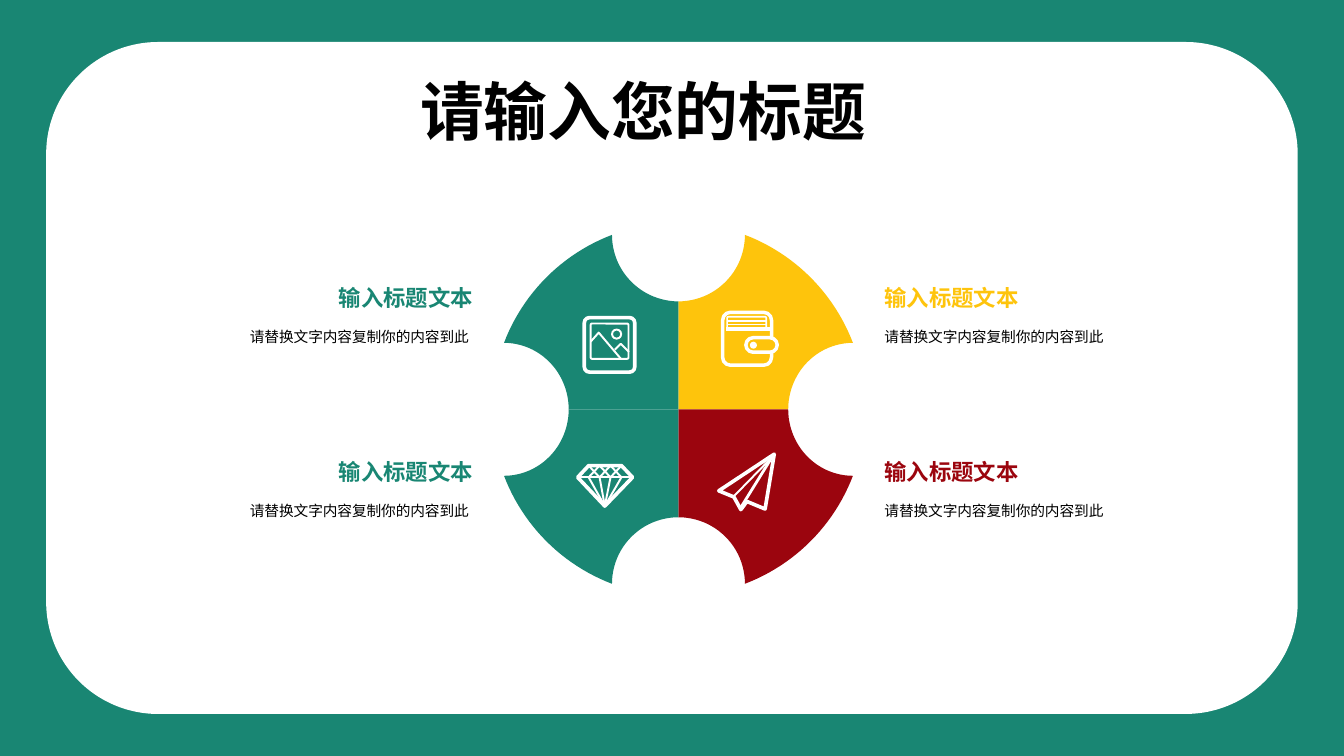
import math
from lxml import etree
from pptx import Presentation
from pptx import util as u
from pptx.dml.color import RGBColor
from pptx.enum import shapes, text
from pptx.oxml import ns

COLORS = {
    "green": "198673",
    "yellow": "FEC40C",
    "red": "9B050E",
    "white": "FFFFFF",
    "black": "000000",
}
CENTER_X, CENTER_Y = 484.65, 292.4
BITE_CENTER, BITE_RADIUS, SIDE_BITE_DEPTH = 124.6, 47.5, 46.2


def arc(x, y, radius_x, radius_y, start, end, steps=24):
    angles = [math.radians(start + (end - start) * i / steps) for i in range(steps + 1)]
    return [(x + radius_x * math.cos(a), y + radius_y * math.sin(a)) for a in angles]


def quadrant_points(side_x, side_y):
    rim = math.hypot(BITE_CENTER, BITE_RADIUS)
    rim_angle = math.degrees(math.atan2(BITE_RADIUS, BITE_CENTER))
    points = [(0, 0)]
    points += arc(0, BITE_CENTER, BITE_RADIUS, BITE_RADIUS, -90, 0)
    points += arc(0, 0, rim, rim, 90 - rim_angle, rim_angle)
    points += arc(BITE_CENTER, 0, SIDE_BITE_DEPTH, BITE_RADIUS, 90, 180)
    return [(CENTER_X + side_x * x, CENTER_Y + side_y * y) for x, y in points]


class Painter:
    font = "Arial"

    def __init__(self, slide):
        self.slide = slide

    def color(self, name):
        return RGBColor.from_string(COLORS[name])

    def stroke(self, shape, width):
        shape.line.color.rgb = self.color("white")
        shape.line.width = u.Pt(width)
        line = shape._element.spPr.find(ns.qn("a:ln"))
        etree.SubElement(line, ns.qn("a:round"))

    def finish(self, shape, fill, width):
        shape.shadow.inherit = False
        if fill:
            shape.fill.solid()
            shape.fill.fore_color.rgb = self.color(fill)
        else:
            shape.fill.background()
        if width:
            self.stroke(shape, width)
        else:
            shape.line.fill.background()

    def preset(self, kind, box, fill=None, width=0, corner=None):
        shape = self.slide.shapes.add_shape(kind, *map(u.Pt, box))
        if corner is not None:
            shape.adjustments[0] = corner
        self.finish(shape, fill, width)

    def rounded(self, box, corner=None, fill=None, width=0):
        self.preset(shapes.MSO_SHAPE.ROUNDED_RECTANGLE, box, fill, width, corner)

    def oval(self, box, fill=None, width=0):
        self.preset(shapes.MSO_SHAPE.OVAL, box, fill, width)

    def outline(self, points, fill=None, width=0, close=True):
        points = [(u.Pt(x), u.Pt(y)) for x, y in points]
        builder = self.slide.shapes.build_freeform(*points[0])
        builder.add_line_segments(points[1:], close=close)
        self.finish(builder.convert_to_shape(), fill, width)

    def line(self, start, end, width):
        connector = self.slide.shapes.add_connector(
            shapes.MSO_CONNECTOR.STRAIGHT, *map(u.Pt, (*start, *end)))
        self.stroke(connector, width)
        etree.SubElement(connector._element.spPr, ns.qn("a:effectLst"))

    def label(self, box, words, size, color="black", bold=False, font=None,
              align=text.PP_ALIGN.LEFT, anchor=text.MSO_ANCHOR.TOP,
              insets=(0, 0, 0, 0), spacing=None):
        frame = self.slide.shapes.add_textbox(*map(u.Pt, box)).text_frame
        frame.word_wrap = True
        frame.vertical_anchor = anchor
        (frame.margin_left, frame.margin_top,
         frame.margin_right, frame.margin_bottom) = map(u.Pt, insets)
        paragraph = frame.paragraphs[0]
        paragraph.alignment = align
        if spacing:
            paragraph.line_spacing = spacing
        run = paragraph.add_run()
        run.text = words
        run.font.name = font or self.font
        run.font.size = u.Pt(size)
        run.font.bold = bold
        run.font.color.rgb = self.color(color)
        east_asian = etree.SubElement(run.font._element, ns.qn("a:ea"))
        east_asian.set("typeface", font or self.font)


def draw_plane(painter):
    painter.outline([(513.4, 350.6), (553, 324.4), (546.5, 363.6), (533.5, 358.2),
                     (529.2, 364), (524.2, 355)], width=2.6)
    nose = (551.5, 326.5)
    painter.line((524.2, 354.5), nose, 1.4)
    painter.line((529.5, 362), nose, 2)


def draw_photo(painter):
    painter.rounded((417.4, 226.9, 36, 38.9), 0.1, width=2.6)
    painter.rounded((421.9, 231.1, 27, 25.2), 0.04, width=1.4)
    painter.oval((437.2, 235.4, 6.5, 6.5), width=1.4)
    painter.outline([(421.9, 244.1), (427.7, 237.6), (443.5, 256.3)], width=1.4, close=False)
    painter.outline([(439.2, 249.8), (443.5, 245.5), (449.3, 251.3)], width=1.4, close=False)


def draw_wallet(painter):
    painter.rounded((516.2, 223.1, 34.9, 37.8), 0.16, width=2.5)
    painter.rounded((519.4, 226.3, 28, 8), 0.1, width=1.2)
    for y in (229.1, 231.8):
        painter.line((519.4, y), (547.4, y), 1.2)
    painter.line((518.4, 235.1), (550.8, 235.1), 2.5)
    painter.rounded((532.8, 241.2, 22.4, 10.4), 0.5, "yellow", 2.5)
    painter.oval((535.7, 244.1, 5, 5), "white")


def draw_diamond(painter):
    top, girdle, tip = 332.6, 341, (432, 361.5)
    left, right = 412.6, 451.8
    facets = [420.5 + 7.8 * i for i in range(4)]
    painter.outline([(left, girdle), (facets[0], top), (facets[-1], top),
                     (right, girdle), tip], width=2.6)
    painter.line((left, girdle), (right, girdle), 1.4)
    for x in facets:
        painter.line((x, girdle), tip, 1.4)
    for levels in ((top, girdle), (girdle, top)):
        painter.outline(list(zip(facets, levels * 2)), width=1.4, close=False)


def main():
    presentation = Presentation()
    presentation.slide_width, presentation.slide_height = u.Pt(960), u.Pt(540)
    slide = presentation.slides.add_slide(presentation.slide_layouts[6])
    painter = Painter(slide)
    slide.background.fill.solid()
    slide.background.fill.fore_color.rgb = painter.color("green")
    painter.rounded((33, 30, 894, 480), fill="white")

    quadrants = [(1, -1, "yellow"), (-1, -1, "green"), (1, 1, "red"), (-1, 1, "green")]
    for side_x, side_y, color in quadrants:
        painter.outline(quadrant_points(side_x, side_y), color)

    for draw in (draw_plane, draw_photo, draw_wallet, draw_diamond):
        draw(painter)

    for side_x, side_y, color in quadrants:
        top = 191.6 if side_y < 0 else 315.6
        if side_x > 0:
            left, width, align = 609.4, 276.5, text.PP_ALIGN.LEFT
            heading_insets, body_insets = (22.4, 0, 0, 0), (22.4, 0, 0, 15.8)
        else:
            left, width, align = 74.6, 285.5, text.PP_ALIGN.RIGHT
            heading_insets, body_insets = (0, 0, 22.4, 0), (0, 0, 25, 15.8)
        painter.label((left, top, width, 30.5), "输入标题文本", 16, color, True,
                      align=align, anchor=text.MSO_ANCHOR.BOTTOM, insets=heading_insets)
        painter.label((left, top + 31, width, 49), "请替换文字内容复制你的内容到此", 10.5,
                      align=align, anchor=text.MSO_ANCHOR.MIDDLE, insets=body_insets,
                      spacing=1.2)

    painter.label((300.2, 51.1, 327.6, 55.4), "请输入您的标题", 45.5, bold=True,
                  font="Noto Sans CJK JP")
    presentation.save("out.pptx")


if __name__ == "__main__":
    main()
